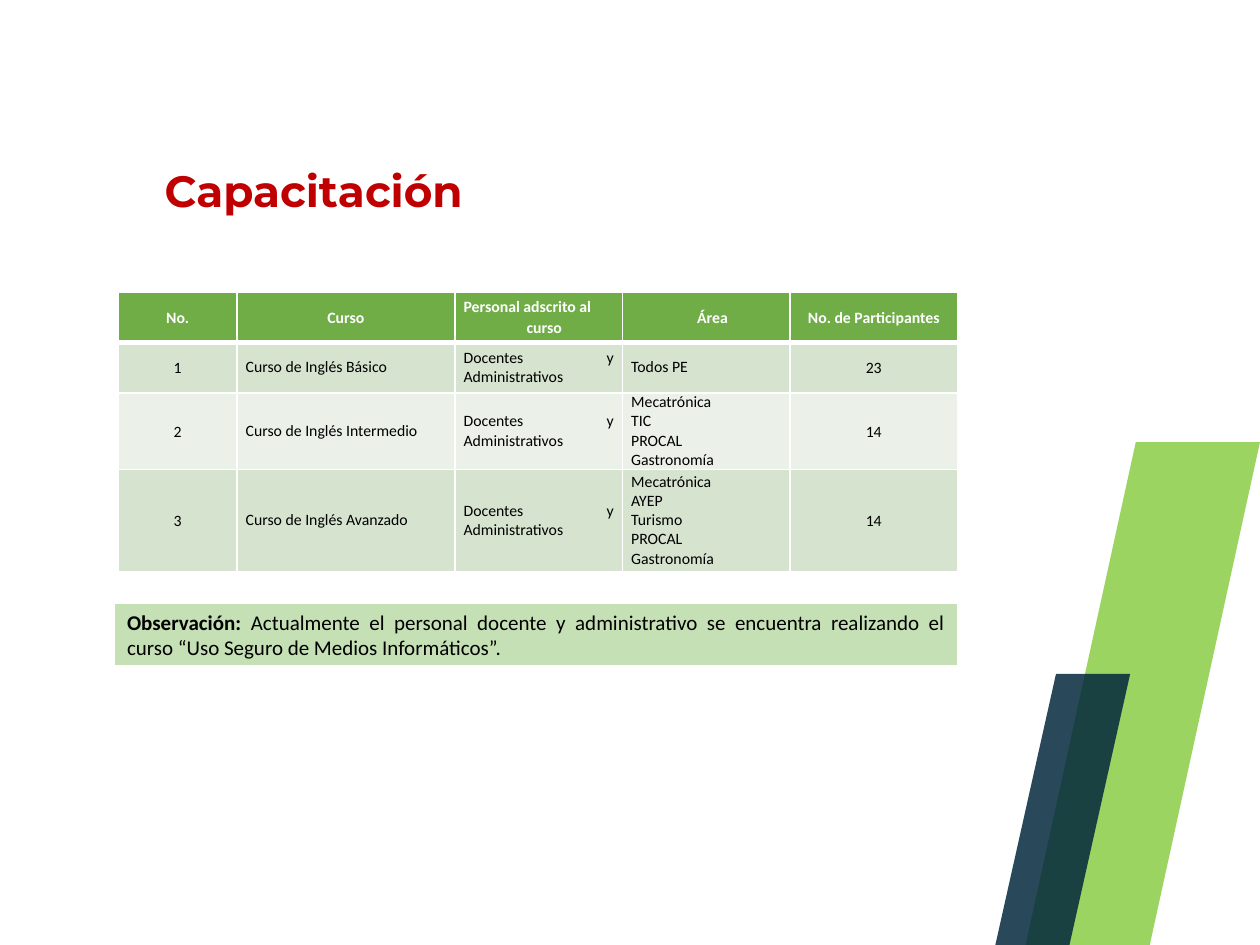
from lxml.etree import SubElement
from pptx import Presentation
from pptx.dml.color import RGBColor
from pptx.enum.text import MSO_ANCHOR as Anchor, PP_ALIGN as Align
from pptx.enum.shapes import MSO_SHAPE as Shape
from pptx.oxml import parse_xml
from pptx.oxml.ns import nsdecls, qn
from pptx.util import Inches, Pt

WIDE, HIGH = 10, 7.5
RED, WHITE, BLACK = "C00000", "FFFFFF", "000000"
HEAD, BANDS = "70AD47", ("D5E3CF", "EBF1E9")
COLS = (0.94, 1.73, 1.33, 1.33, 1.33)
ROWS = (0.4, 0.4, 0.6, 0.81)
HANGS = (0.5, 0.5, 0.5, 0.4, 0.5)
STAFF = "Docentes y Administrativos"
TITLES = ("No.", "Curso", "Personal adscrito al curso", "Área",
          "No. de Participantes")
COURSES = (
    ("1", "Curso de Inglés Básico", STAFF, "Todos PE", "23"),
    ("2", "Curso de Inglés Intermedio", STAFF,
     "Mecatrónica\nTIC\nPROCAL\nGastronomía", "14"),
    ("3", "Curso de Inglés Avanzado", STAFF,
     "Mecatrónica\nAYEP\nTurismo\nPROCAL\nGastronomía", "14"),
)


def tint(text):
    return RGBColor.from_string(text)


def paint(shape, color):
    shape.fill.solid()
    shape.fill.fore_color.rgb = tint(color)


def place(box):
    """Turn shares of the slide into left, top, width and height."""
    x, y, w, h = box
    return [Inches(n) for n in (x * WIDE, y * HIGH, w * WIDE, h * HIGH)]


def write(para, text, size, color, bold=False, face="Calibri"):
    run = para.add_run()
    run.text = text
    font = run.font
    font.name, font.size, font.bold = face, Pt(size), bold
    font.color.rgb = tint(color)


def add_title(slide, box):
    title = slide.shapes.title
    title.left, title.top, title.width, title.height = place(box)
    frame = title.text_frame
    frame.word_wrap = True
    frame.vertical_anchor = Anchor.MIDDLE
    frame.margin_bottom = Inches(0.34)
    para = frame.paragraphs[0]
    para.alignment, para.line_spacing = Align.CENTER, 0.8
    write(para, "Capacitación", 25, RED, True, "Montserrat")


def add_blade(group, box, foot, color, alpha):
    """Draw a see-through slanted band whose ends are foot wide."""
    x, y, w, h = place(box)
    foot = int(w * foot)
    pen = group.shapes.build_freeform(x + w, y)
    pen.add_line_segments([(x + w - foot, y), (x, y + h), (x + foot, y + h)])
    blade = pen.convert_to_shape()
    blade.shadow.inherit = False
    paint(blade, color)
    blade.line.fill.background()
    fill = blade.fill._xPr.find(qn("a:solidFill"))
    SubElement(fill[0], qn("a:alpha"), val=str(alpha * 1000))


def add_blades(slide):
    group = slide.shapes.add_group_shape()
    add_blade(group, (0.814, 0.468, 0.186, 0.532), 0.53, "92D050", 90)
    add_blade(group, (0.79, 0.713, 0.107, 0.287), 0.55, "00263B", 84)


def add_note(slide, box):
    note = slide.shapes.add_shape(Shape.RECTANGLE, *place(box))
    note.shadow.inherit = False
    paint(note, "C5E0B4")
    note.line.color.rgb = tint(WHITE)
    note.line.width = Pt(0.75)
    frame = note.text_frame
    frame.word_wrap = True
    para = frame.paragraphs[0]
    para.alignment = Align.JUSTIFY
    write(para, "Observación:", 12, BLACK, True)
    write(para, " Actualmente el personal docente y administrativo se "
          "encuentra realizando el curso “Uso Seguro de Medios "
          "Informáticos”.", 12, BLACK)


def add_edges(cell, top, low):
    """Give a cell white borders; top and low are widths in points."""
    props = cell._tc.get_or_add_tcPr()
    for i, (side, width) in enumerate(zip("LRTB", (1, 1, top, low))):
        props.insert(i, parse_xml(
            f'<a:ln{side} {nsdecls("a")} w="{Pt(width)}"><a:solidFill>'
            f'<a:srgbClr val="{WHITE}"/></a:solidFill></a:ln{side}>'))


def fill_cell(cell, text, row, col):
    head = row == 0
    paint(cell, HEAD if head else BANDS[(row - 1) % 2])
    add_edges(cell, 3 if row == 1 else 1, 3 if head else 1)
    cell.vertical_anchor = Anchor.MIDDLE
    cell.margin_left = cell.margin_right = Inches(0.07)
    cell.margin_top = cell.margin_bottom = 0
    frame = cell.text_frame
    for i, line in enumerate(text.split("\n")):
        para = frame.add_paragraph() if i else frame.paragraphs[0]
        if head:
            para.alignment = Align.LEFT if col == 2 else Align.CENTER
        else:
            para.alignment = Align.CENTER if col in (0, 4) else Align.JUSTIFY
        if head or col in (0, 4):
            para.line_spacing = 1.07
        if head or col == 0:
            props = para._p.get_or_add_pPr()
            props.set("marL", str(Inches(0.5)))
            props.set("indent", str(-Inches(HANGS[col])))
        write(para, line, 9, WHITE if head else BLACK, head)


def add_courses(slide, box):
    table = slide.shapes.add_table(len(ROWS), len(COLS), *place(box)).table
    table.first_row = table.horz_banding = False
    for col, width in zip(table.columns, COLS):
        col.width = Inches(width)
    for row, height in zip(table.rows, ROWS):
        row.height = Inches(height)
    for r, texts in enumerate((TITLES, *COURSES)):
        for c, text in enumerate(texts):
            fill_cell(table.cell(r, c), text, r, c)


def main():
    deck = Presentation()
    deck.slide_width, deck.slide_height = Inches(WIDE), Inches(HIGH)
    slide = deck.slides.add_slide(deck.slide_layouts[5])
    add_title(slide, (0.046, 0.13, 0.406, 0.192))
    add_blades(slide)
    add_note(slide, (0.091, 0.638, 0.669, 0.067))
    add_courses(slide, (0.094, 0.309, 0.666, 0.295))
    deck.save("out.pptx")


if __name__ == "__main__":
    main()
